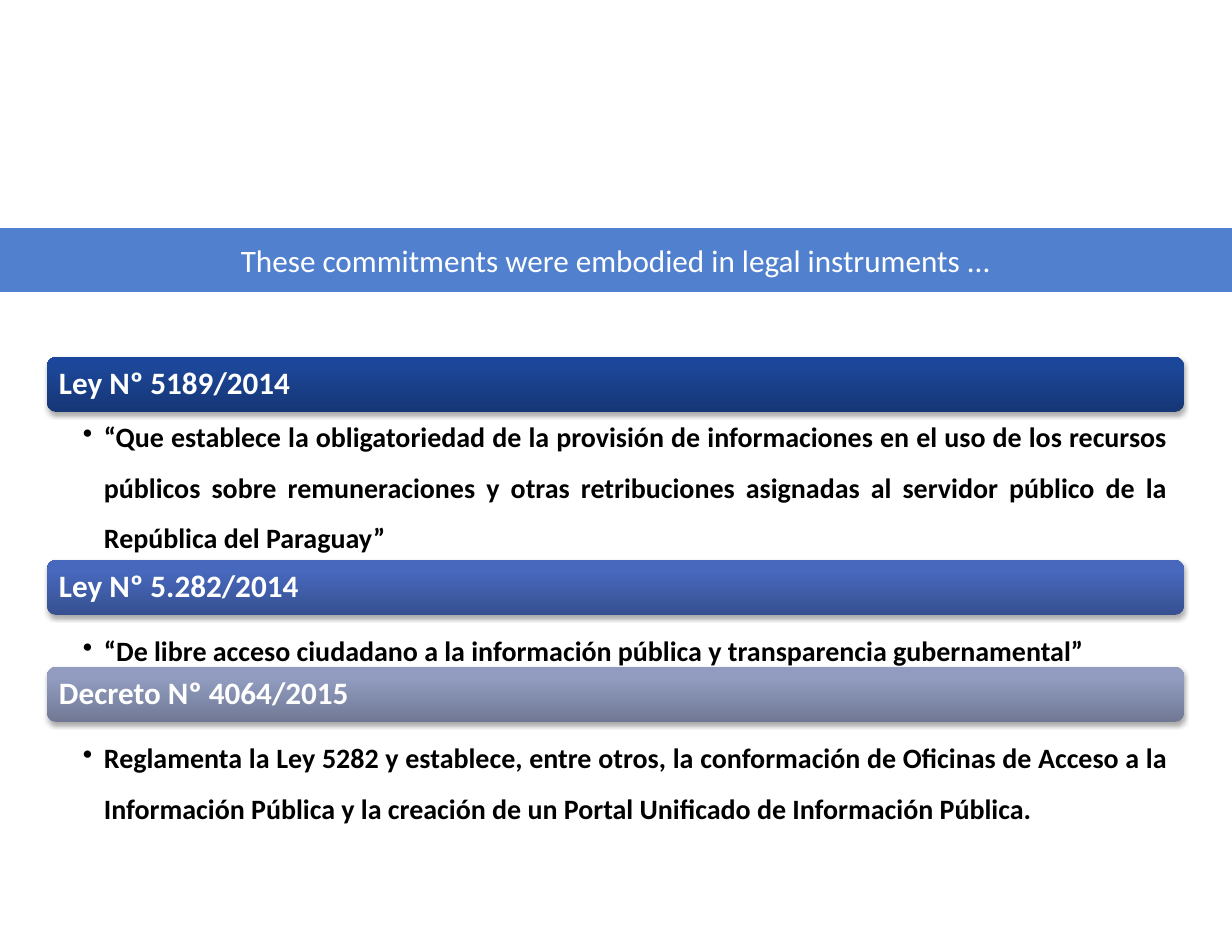
from typing import NamedTuple

import pptx
import pptx.dml.color
import pptx.enum.shapes
import pptx.enum.text
import pptx.oxml
import pptx.oxml.ns
import pptx.util
from lxml import etree

EMU_PER_PX = 914400 / 112
SLIDE_WIDTH, SLIDE_HEIGHT = 1232, 952
BAR_LEFT, BAR_WIDTH, BAR_HEIGHT = 47, 1137, 55
HEADING_INSET = 3
BULLET_INDENT = 21

ALIGN = pptx.enum.text.PP_ALIGN
ANCHOR = pptx.enum.text.MSO_ANCHOR
SHAPE = pptx.enum.shapes.MSO_SHAPE


class Box(NamedTuple):
    left: int
    top: int
    width: int
    height: int


class Law(NamedTuple):
    heading: str
    summary: str
    bar_top: int
    summary_top: int
    summary_height: int
    gradient: tuple[str, str, str]


LAWS = [
    Law("Ley Nº 5189/2014",
        "“Que establece la obligatoriedad de la provisión de informaciones en el uso de los "
        "recursos públicos sobre remuneraciones y otras retribuciones asignadas al servidor "
        "público de la República del Paraguay”",
        357, 400, 148, ("163675", "1C4697", "1A469B")),
    Law("Ley Nº 5.282/2014",
        "“De libre acceso ciudadano a la información pública y transparencia gubernamental”",
        560, 614, 53, ("365091", "4768BC", "4568BF")),
    Law("Decreto Nº 4064/2015",
        "Reglamenta la Ley 5282 y establece, entre otros, la conformación de Oficinas de Acceso "
        "a la Información Pública y la creación de un Portal Unificado de Información Pública.",
        667, 721, 101, ("707894", "919CC0", "919CC2")),
]

BANNER_FORMAT = {"alignment": ALIGN.CENTER}
HEADING_FORMAT = {"alignment": ALIGN.LEFT, "line_spacing": 0.9}
SUMMARY_FORMAT = {"alignment": ALIGN.JUSTIFY, "line_spacing": 1.5, "level": 1}


def px(length: int) -> int:
    return round(length * EMU_PER_PX)


def color(value: str) -> pptx.dml.color.RGBColor:
    return pptx.dml.color.RGBColor.from_string(value)


def drawing_xml(xml: str) -> etree._Element:
    return pptx.oxml.parse_xml(f'<a:part {pptx.oxml.ns.nsdecls("a")}>{xml}</a:part>')[0]


def add_panel(slide, preset, box: Box):
    panel = slide.shapes.add_shape(preset, *map(px, box))
    panel.shadow.inherit = False
    panel.line.fill.background()
    return panel


def add_bar(slide, box: Box, gradient: tuple[str, str, str]) -> None:
    bar = add_panel(slide, SHAPE.ROUNDED_RECTANGLE, box)
    stops = "".join(f'<a:gs pos="{position * 1000}"><a:srgbClr val="{value}"/></a:gs>'
                    for position, value in zip((0, 80, 100), gradient))
    bar.fill.solid()
    properties = bar._element.spPr
    solid = properties.find(pptx.oxml.ns.qn("a:solidFill"))
    properties.replace(solid, drawing_xml(
        f'<a:gradFill><a:gsLst>{stops}</a:gsLst><a:lin ang="16200000" scaled="0"/></a:gradFill>'))
    # Soft shadow straight below the bar
    properties.find(pptx.oxml.ns.qn("a:effectLst")).append(drawing_xml(
        '<a:outerShdw blurRad="40000" dist="23000" dir="5400000" rotWithShape="0">'
        '<a:srgbClr val="000000"><a:alpha val="35000"/></a:srgbClr></a:outerShdw>'))


def write_text(shape, text: str, size: int, ink: str, bold: bool, anchor,
               insets: tuple[int, int, int, int], paragraph_format: dict,
               bullet: bool = False) -> None:
    frame = shape.text_frame
    left, top, right, bottom = map(px, insets)
    frame_format = {"word_wrap": True, "vertical_anchor": anchor, "margin_left": left,
                    "margin_top": top, "margin_right": right, "margin_bottom": bottom}
    for name, value in frame_format.items():
        setattr(frame, name, value)
    paragraph = frame.paragraphs[0]
    if bullet:
        properties = paragraph._p.get_or_add_pPr()
        properties.set("marL", str(px(BULLET_INDENT)))
        properties.set("indent", str(-px(BULLET_INDENT)))
        properties.append(drawing_xml('<a:buChar char="•"/>'))
    for name, value in paragraph_format.items():
        setattr(paragraph, name, value)
    run = paragraph.add_run()
    run.text = text
    font_format = {"name": "Calibri", "size": pptx.util.Pt(size), "bold": bold}
    for name, value in font_format.items():
        setattr(run.font, name, value)
    run.font.color.rgb = color(ink)


def add_law(slide, law: Law) -> None:
    bar_box = Box(BAR_LEFT, law.bar_top, BAR_WIDTH, BAR_HEIGHT)
    add_bar(slide, bar_box, law.gradient)
    heading_box = Box(BAR_LEFT + HEADING_INSET, law.bar_top + HEADING_INSET,
                      BAR_WIDTH - 2 * HEADING_INSET, BAR_HEIGHT - 2 * HEADING_INSET)
    heading = slide.shapes.add_textbox(*map(px, heading_box))
    write_text(heading, law.heading, 20, "FFFFFF", True, ANCHOR.MIDDLE,
               (9, 9, 9, 9), HEADING_FORMAT)
    summary_box = Box(BAR_LEFT, law.summary_top, BAR_WIDTH, law.summary_height)
    summary = slide.shapes.add_textbox(*map(px, summary_box))
    write_text(summary, law.summary, 18, "000000", True, ANCHOR.TOP,
               (36, 3, 16, 3), SUMMARY_FORMAT, bullet=True)


def main() -> None:
    presentation = pptx.Presentation()
    presentation.slide_width = px(SLIDE_WIDTH)
    presentation.slide_height = px(SLIDE_HEIGHT)
    slide = presentation.slides.add_slide(presentation.slide_layouts[6])

    # Title banner
    banner = add_panel(slide, SHAPE.RECTANGLE, Box(0, 228, SLIDE_WIDTH, 64))
    banner.fill.solid()
    banner.fill.fore_color.rgb = color("5181CE")
    write_text(banner, "These commitments were embodied in legal instruments ...",
               20, "FFFFFF", False, ANCHOR.MIDDLE, (0, 0, 0, 0), BANNER_FORMAT)

    # Legal instruments
    for law in LAWS:
        add_law(slide, law)

    presentation.save("out.pptx")


if __name__ == "__main__":
    main()
